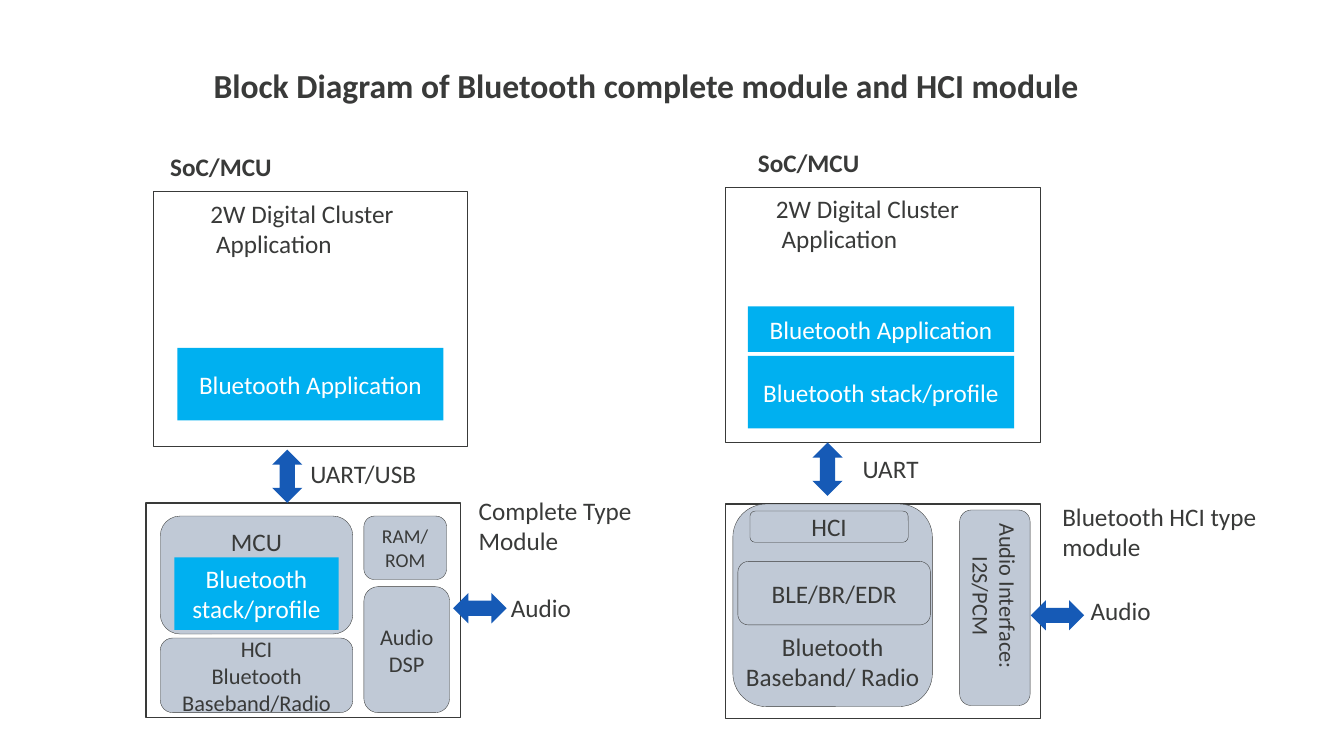
from pptx import Presentation
from pptx import util as u
from pptx.dml.color import RGBColor
from pptx.enum import shapes, text

# Grid: ten columns and ten rows to the inch
COLUMN = ROW = u.Inches(0.1)
SLIDE_COLUMNS, SLIDE_ROWS = 133.33, 75

INK = RGBColor(0x39, 0x3A, 0x39)
WHITE = RGBColor(0xFF, 0xFF, 0xFF)
HARDWARE = RGBColor(0xC0, 0xC9, 0xD6)
SOFTWARE = RGBColor(0x00, 0xB0, 0xF0)
LINK = RGBColor(0x16, 0x5A, 0xB6)

FRAME_WIDTH, HOST_HEIGHT, MODULE_HEIGHT = 31.2, 25.3, 21.3
ARROW_WIDTH, ARROW_LENGTH = 3, 5.3
LINE_HEIGHT = 4


def place(left, top, width, height):
    return (round(left * COLUMN), round(top * ROW),
            round(width * COLUMN), round(height * ROW))


def write(frame, wording, size, color, align, bold=False):
    for number, line in enumerate(wording.split("\n")):
        paragraph = frame.paragraphs[0] if number == 0 else frame.add_paragraph()
        paragraph.text = line
        paragraph.alignment = align
        paragraph.font.name = "Calibri"
        paragraph.font.size = u.Pt(size)
        paragraph.font.bold = bold
        paragraph.font.color.rgb = color


def add_solid(slide, preset, area, fill, line_width=0):
    solid = slide.shapes.add_shape(preset, *place(*area))
    solid.shadow.inherit = False
    solid.fill.solid()
    solid.fill.fore_color.rgb = fill
    if line_width:
        solid.line.color.rgb = INK
        solid.line.width = u.Pt(line_width)
    else:
        solid.line.fill.background()
    return solid


def add_frame(slide, left, top, height):
    area = (left, top, FRAME_WIDTH, height)
    add_solid(slide, shapes.MSO_SHAPE.RECTANGLE, area, WHITE, 1)


def add_software(slide, wording, *area):
    block = add_solid(slide, shapes.MSO_SHAPE.RECTANGLE, area, SOFTWARE)
    write(block.text_frame, wording, 18, WHITE, text.PP_ALIGN.CENTER)


def add_hardware(slide, wording, *area, size=18, anchor=text.MSO_ANCHOR.MIDDLE):
    block = add_solid(slide, shapes.MSO_SHAPE.ROUNDED_RECTANGLE, area, HARDWARE, 0.25)
    block.text_frame.vertical_anchor = anchor
    write(block.text_frame, wording, size, INK, text.PP_ALIGN.CENTER)
    return block.text_frame


def add_link(slide, left, top, rotation=0):
    area = (left, top, ARROW_WIDTH, ARROW_LENGTH)
    arrow = add_solid(slide, shapes.MSO_SHAPE.UP_DOWN_ARROW, area, LINK)
    arrow.rotation = rotation


def add_label(slide, wording, left, top, width, height=LINE_HEIGHT,
              size=18, bold=False, wrap=False):
    frame = slide.shapes.add_textbox(*place(left, top, width, height)).text_frame
    frame.word_wrap = wrap
    frame.auto_size = text.MSO_AUTO_SIZE.SHAPE_TO_FIT_TEXT
    write(frame, wording, size, INK, text.PP_ALIGN.LEFT, bold)


def draw_complete_module(slide):
    # Host processor
    add_frame(slide, 15.2, 19, HOST_HEIGHT)
    add_label(slide, "SoC/MCU", 15.9, 14.5, 12.2, bold=True)
    add_label(slide, "2W Digital Cluster\n Application", 19.9, 19.2, 20.4, 7.1)
    add_software(slide, "Bluetooth Application", 17.6, 34.5, 26.4, 7.2)

    # Module with its own controller
    add_frame(slide, 14.5, 49.9, MODULE_HEIGHT)
    add_hardware(slide, "HCI\nBluetooth Baseband/Radio", 15.9, 63.3, 19.1, 7.4, size=16)
    add_hardware(slide, "MCU", 15.9, 51.2, 19.1, 11.7, anchor=text.MSO_ANCHOR.TOP)
    add_software(slide, "Bluetooth stack/profile", 17.3, 55.3, 16.3, 7.2)
    add_hardware(slide, "RAM/ROM", 36.1, 51.2, 8.2, 6.3, size=14)
    add_hardware(slide, "Audio DSP", 36.1, 58.2, 8.5, 12.5, size=16)
    add_label(slide, "Complete Type\nModule", 46.5, 48.6, 18, 7.1)

    # Links
    add_link(slide, 27, 44.6)
    add_label(slide, "UART/USB", 29.8, 45, 12.6)
    add_link(slide, 46.1, 57.7, rotation=90)
    add_label(slide, "Audio", 49.7, 58.3, 8.1)


def draw_hci_module(slide):
    # Host processor
    add_frame(slide, 72, 18.6, HOST_HEIGHT)
    add_label(slide, "SoC/MCU", 74.2, 14.1, 12.2, bold=True)
    add_label(slide, "2W Digital Cluster\n Application", 76, 18.7, 20.4, 7.1)
    add_software(slide, "Bluetooth Application", 74.2, 30.4, 26.4, 4.5)
    add_software(slide, "Bluetooth stack/profile", 74.2, 35.3, 26.4, 7.2)

    # Radio module
    add_frame(slide, 72, 50, MODULE_HEIGHT)
    radio = add_hardware(slide, "Bluetooth Baseband/ Radio", 72.7, 50, 19.8, 20.1,
                         anchor=text.MSO_ANCHOR.BOTTOM)
    radio.margin_left = radio.margin_right = 0
    audio = add_hardware(slide, "Audio Interface:\nI2S/PCM", 95.2, 50.6, 7, 19.4, size=16)
    audio._txBody.bodyPr.set("vert", "eaVert")
    add_hardware(slide, "BLE/BR/EDR", 73.2, 55.7, 19.1, 6.3)
    add_hardware(slide, "HCI", 74.4, 50.7, 15.7, 3.1)
    add_label(slide, "Bluetooth HCI type\nmodule", 104.4, 49.2, 22.1, 7.1)

    # Links
    add_link(slide, 80.6, 43.9)
    add_label(slide, "UART", 84.6, 44.5, 7.6)
    add_link(slide, 103.4, 58.4, rotation=90)
    add_label(slide, "Audio", 107.2, 58.6, 8.1)


def main():
    deck = Presentation()
    deck.slide_width = round(SLIDE_COLUMNS * COLUMN)
    deck.slide_height = SLIDE_ROWS * ROW
    slide = deck.slides.add_slide(deck.slide_layouts[6])

    add_label(slide, "Block Diagram of Bluetooth complete module and HCI module",
              20.2, 5.9, 106.2, 5, size=24, bold=True, wrap=True)
    draw_complete_module(slide)
    draw_hci_module(slide)
    deck.save("out.pptx")


if __name__ == "__main__":
    main()
